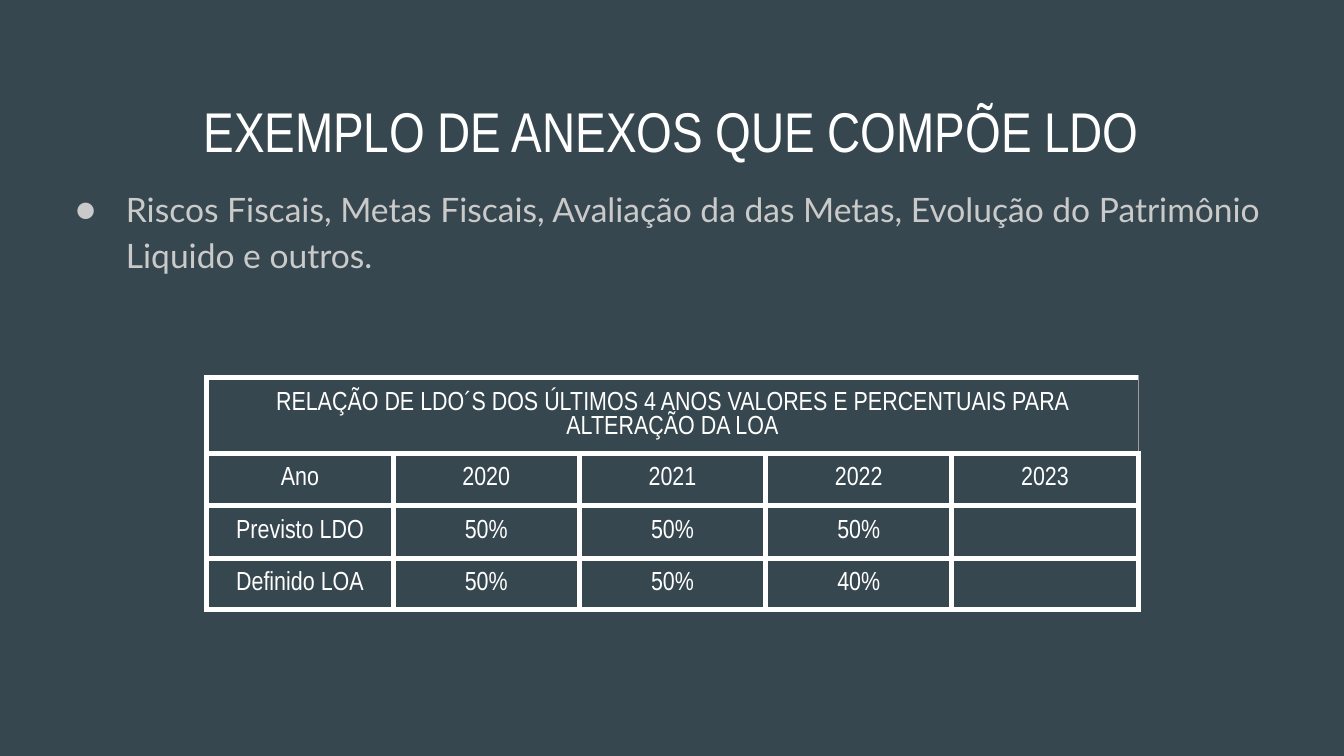
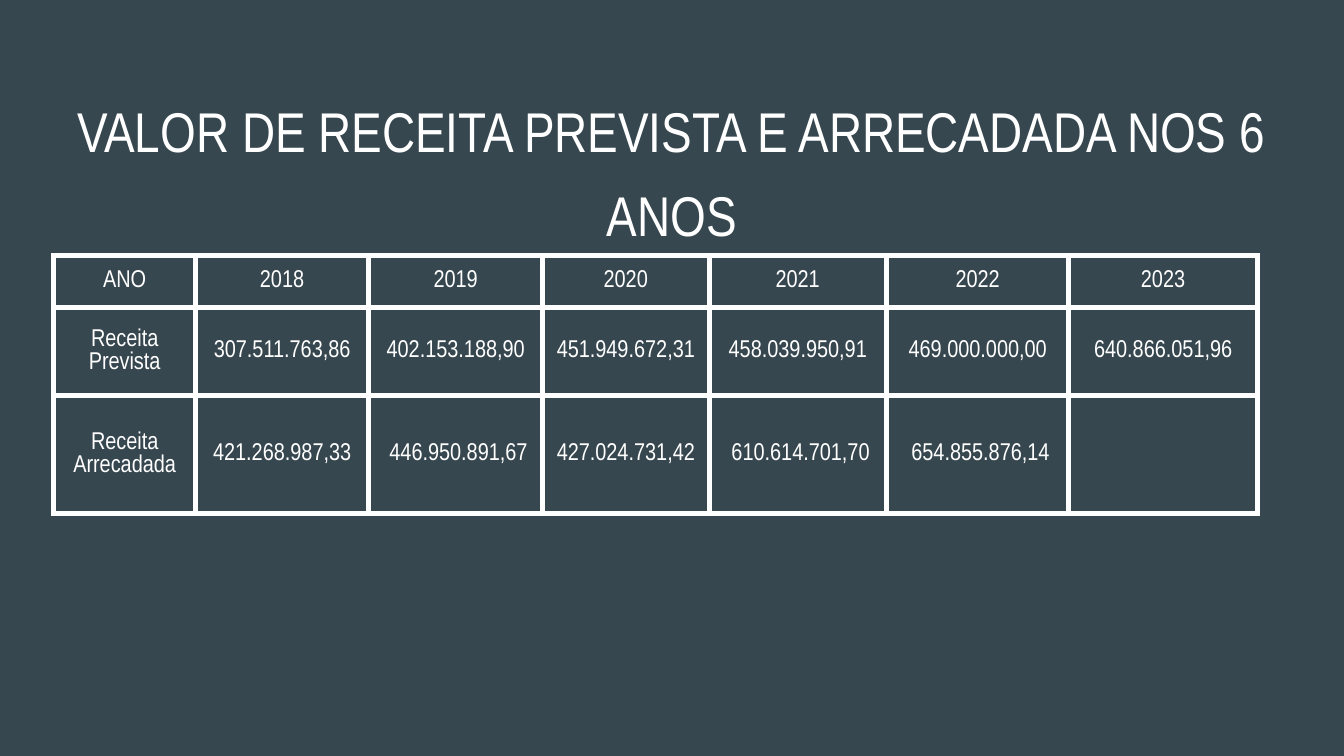
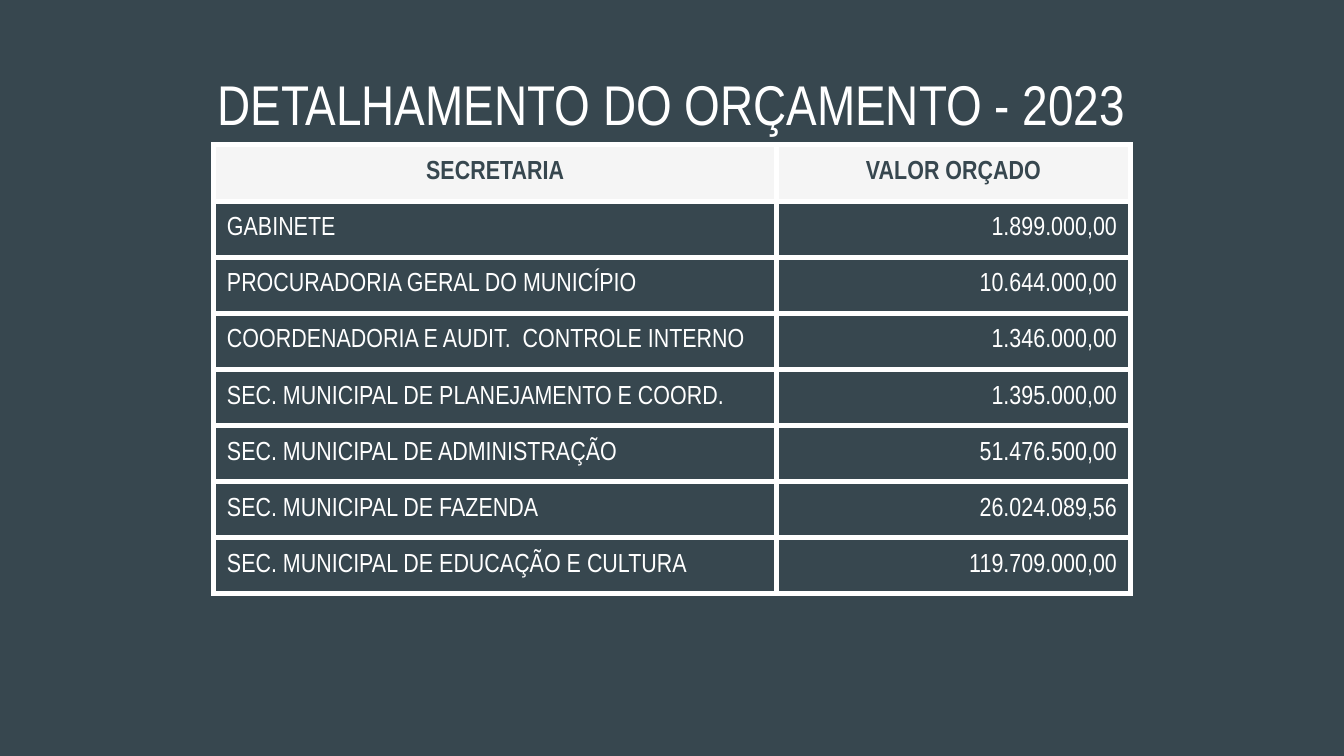
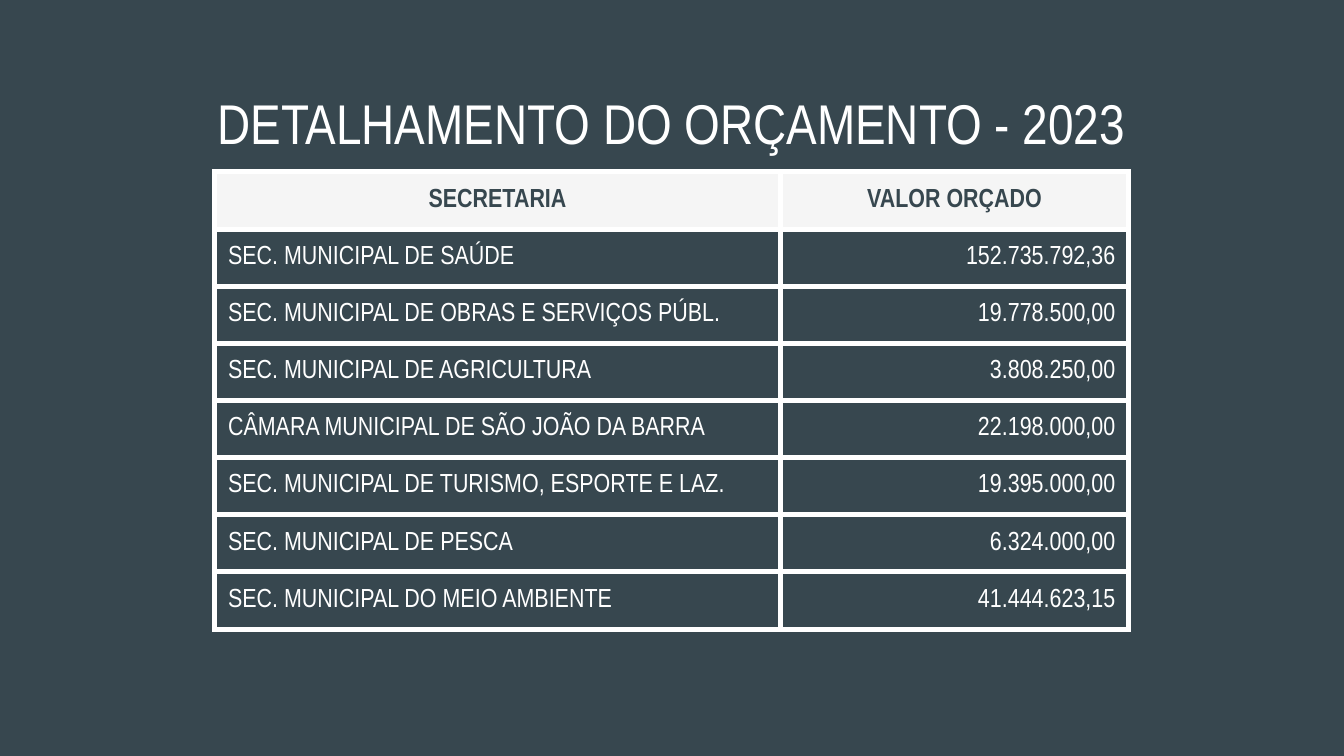
from lxml import etree
from pptx import Presentation
from pptx.dml.color import RGBColor
from pptx.enum import text as tx
from pptx.oxml import ns
from pptx.util import Cm, Pt

SLATE = RGBColor(0x37, 0x47, 0x4F)
WHITE = RGBColor(0xFF, 0xFF, 0xFF)
PALE = RGBColor(0xF5, 0xF5, 0xF5)
SILVER = RGBColor(0xCA, 0xCA, 0xCA)
GREY = RGBColor(0x9E, 0x9E, 0x9E)
NARROW, LATO = "Arial Narrow", "Lato"
LEFT, MID, RIGHT = tx.PP_ALIGN.LEFT, tx.PP_ALIGN.CENTER, tx.PP_ALIGN.RIGHT
TOP, HALF = tx.MSO_ANCHOR.TOP, tx.MSO_ANCHOR.MIDDLE
PAD = 0.25
EDGE = (WHITE, 3)

ANNEX = "Riscos Fiscais, Metas Fiscais, Avaliação da das Metas, Evolução do Patrimônio Liquido e outros."
BUDGET = "DETALHAMENTO DO ORÇAMENTO - 2023"
HEAD = ("SECRETARIA", "VALOR ORÇADO")

PAGES = [
    dict(title="EXEMPLO DE ANEXOS QUE COMPÕE LDO", top=1.24, body=ANNEX, kind="ratio",
         at=(3.91, 7.14), cols=[3.52] * 5, tall=[0.99, 0.99, 0.99, 0.87], rows=[
             ("RELAÇÃO DE LDO´S DOS ÚLTIMOS 4 ANOS VALORES E PERCENTUAIS PARA ALTERAÇÃO DA LOA",
              "", "", "", ""),
             ("Ano", "2020", "2021", "2022", "2023"),
             ("Previsto LDO", "50%", "50%", "50%", ""),
             ("Definido LOA", "50%", "50%", "40%", "")]),
    dict(title="VALOR DE RECEITA PREVISTA E ARRECADADA NOS 6 ANOS", top=1.24, kind="income",
         at=(1.02, 4.83), cols=[2.67, 3.28, 3.28, 3.15, 3.35, 3.45, 3.56],
         tall=[0.99, 1.65, 2.24], rows=[
             ("ANO", "2018", "2019", "2020", "2021", "2022", "2023"),
             ("Receita Prevista", "307.511.763,86", "402.153.188,90", "451.949.672,31",
              "458.039.950,91", "469.000.000,00", "640.866.051,96"),
             ("Receita Arrecadada", "421.268.987,33", " 446.950.891,67", "427.024.731,42",
              " 610.614.701,70", " 654.855.876,14", "")]),
    dict(title=BUDGET, top=0.74, kind="budget",
         at=(4.04, 2.74), cols=[10.64, 6.68], tall=[1.06] * 8, rows=[
             HEAD,
             ("GABINETE", "1.899.000,00"),
             ("PROCURADORIA GERAL DO MUNICÍPIO", "10.644.000,00"),
             ("COORDENADORIA E AUDIT.  CONTROLE INTERNO", "1.346.000,00"),
             ("SEC. MUNICIPAL DE PLANEJAMENTO E COORD.", "1.395.000,00"),
             ("SEC. MUNICIPAL DE ADMINISTRAÇÃO", "51.476.500,00"),
             ("SEC. MUNICIPAL DE FAZENDA", "26.024.089,56"),
             ("SEC. MUNICIPAL DE EDUCAÇÃO E CULTURA", "119.709.000,00")]),
    dict(title=BUDGET, top=1.09, kind="budget",
         at=(4.06, 3.25), cols=[10.69, 6.58], tall=[1.08] * 8, rows=[
             HEAD,
             ("SEC. MUNICIPAL DE SAÚDE", "152.735.792,36"),
             ("SEC. MUNICIPAL DE OBRAS E SERVIÇOS PÚBL.", "19.778.500,00"),
             ("SEC. MUNICIPAL DE AGRICULTURA", "3.808.250,00"),
             ("CÂMARA MUNICIPAL DE SÃO JOÃO DA BARRA", "22.198.000,00"),
             ("SEC. MUNICIPAL DE TURISMO, ESPORTE E LAZ.", "19.395.000,00"),
             ("SEC. MUNICIPAL DE PESCA", "6.324.000,00"),
             ("SEC. MUNICIPAL DO MEIO AMBIENTE", "41.444.623,15")]),
]


def sub(node, tag, **attrs):
    return etree.SubElement(node, ns.qn("a:" + tag), attrs)


def tint(node, color):
    sub(sub(node, "solidFill"), "srgbClr", val=str(color))


def write(frame, words, size=14, font=NARROW, color=WHITE, bold=False,
          align=MID, space=1.0, after=0):
    para = frame.paragraphs[0]
    para.alignment, para.line_spacing = align, space
    para.space_before, para.space_after = Pt(0), Pt(after)
    if words:
        run = para.add_run()
        run.text = words
        style = run.font
        style.name, style.size, style.bold = font, Pt(size), bold
        style.color.rgb = color
    else:
        end = sub(para._p, "endParaRPr", sz=str(size * 100))
        sub(end, "latin", typeface=font)
    return para


def place(shape, top, high):
    shape.left, shape.top, shape.width, shape.height = Cm(0.86), Cm(top), Cm(23.67), Cm(high)
    frame = shape.text_frame
    frame.word_wrap, frame.auto_size = True, tx.MSO_AUTO_SIZE.NONE
    frame.vertical_anchor = TOP
    frame.margin_left = frame.margin_right = Cm(PAD)
    frame.margin_top = frame.margin_bottom = Cm(PAD)
    return frame


def bullet(para):
    props = para._p.get_or_add_pPr()
    props.set("marL", str(Cm(1.27)))
    props.set("indent", str(Cm(-0.95)))
    sub(sub(props, "buClr"), "srgbClr", val=str(SILVER))
    sub(props, "buFont", typeface=LATO)
    sub(props, "buChar", char="●")


def border(cell, right):
    props = cell._tc.get_or_add_tcPr()
    for side in "LRTB":
        color, width = right if side == "R" else EDGE
        tint(sub(props, "ln" + side, w=str(Pt(width))), color)


def design(kind, row, col):
    look = dict(side=PAD, edge=PAD, fill=None, anchor=HALF, right=EDGE)
    form = {}
    if kind == "ratio":
        look.update(anchor=TOP, right=(GREY, 0.75) if row == 0 else EDGE)
    elif kind == "income":
        form["size"] = 13
        if row == 0:
            look.update(side=0.18, edge=0)
            form["after"] = 7.5
    elif row == 0:
        look["fill"] = PALE
        form.update(color=SLATE, bold=True)
    else:
        form["align"] = (LEFT, RIGHT)[col]
    return look, form


def grid(slide, page):
    rows, cols, tall = page["rows"], page["cols"], page["tall"]
    left, top = page["at"]
    table = slide.shapes.add_table(len(rows), len(cols), Cm(left), Cm(top),
                                   Cm(sum(cols)), Cm(sum(tall))).table
    table.first_row = table.horz_banding = False
    for col, wide in zip(table.columns, cols):
        col.width = Cm(wide)
    for row, high in zip(table.rows, tall):
        row.height = Cm(high)
    for r, line in enumerate(rows):
        for c, words in enumerate(line):
            cell = table.cell(r, c)
            look, form = design(page["kind"], r, c)
            cell.margin_left = cell.margin_right = Cm(look["side"])
            cell.margin_top = cell.margin_bottom = Cm(look["edge"])
            cell.vertical_anchor = look["anchor"]
            border(cell, look["right"])
            if look["fill"]:
                cell.fill.solid()
                cell.fill.fore_color.rgb = look["fill"]
            else:
                cell.fill.background()
            write(cell.text_frame, words, **form)
    if page["kind"] == "ratio":
        table.cell(0, 0).merge(table.cell(0, len(cols) - 1))


def main():
    deck = Presentation()
    deck.slide_width, deck.slide_height = Cm(25.4), Cm(14.29)
    back = deck.slide_master.background.fill
    back.solid()
    back.fore_color.rgb = SLATE
    for page in PAGES:
        slide = deck.slides.add_slide(deck.slide_layouts[1 if "body" in page else 5])
        write(place(slide.shapes.title, page["top"], 1.6), page["title"], size=30, space=1.26)
        if "body" in page:
            frame = place(slide.placeholders[1], 3.2, 9.5)
            bullet(write(frame, page["body"], size=18, font=LATO, color=SILVER,
                         align=LEFT, space=1.15))
        grid(slide, page)
    deck.save("out.pptx")


if __name__ == "__main__":
    main()
